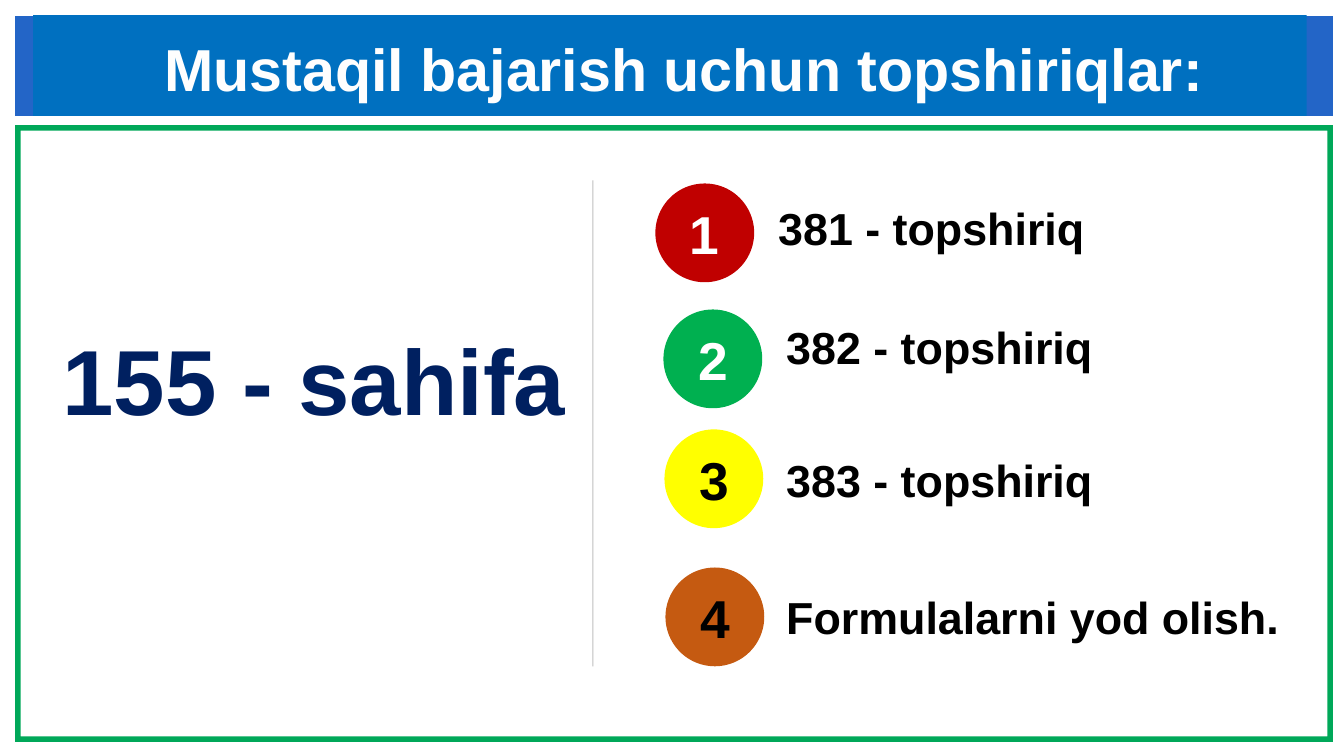
"""Builds a slide that lists four tasks for independent work."""
from lxml import etree
from pptx import Presentation
from pptx.dml.color import RGBColor
from pptx.enum.shapes import MSO_CONNECTOR, MSO_SHAPE
from pptx.enum.text import MSO_ANCHOR, PP_ALIGN
from pptx.oxml.ns import qn
from pptx.util import Inches, Pt

RECTANGLE, OVAL, FRAME = MSO_SHAPE.RECTANGLE, MSO_SHAPE.OVAL, MSO_SHAPE.FRAME
STRAIGHT = MSO_CONNECTOR.STRAIGHT
MIDDLE, TOP = MSO_ANCHOR.MIDDLE, MSO_ANCHOR.TOP
LEFT, CENTER = PP_ALIGN.LEFT, PP_ALIGN.CENTER
COLORS = {
    "frame": "00A859", "band": "2365C7", "title": "0070C0", "title text": "FEFEFE",
    "page number": "002060", "divider": "7F7F7F", "white": "FFFFFF", "black": "000000",
    "red": "C00000", "green": "00B050", "yellow": "FFFF00", "brown": "C55A11",
}
MARGIN, FULL_WIDTH = 0.15, 13.07
BADGE = 0.98
TASKS = [
    ("381 - topshiriq", "red", "white", 6.5, 1.82, 7.62, 1.94),
    ("382 - topshiriq", "green", "white", 6.58, 3.07, 7.7, 3.12),
    ("383 - topshiriq", "yellow", "black", 6.59, 4.26, 7.7, 4.44),
    ("Formulalarni yod olish.", "brown", "black", 6.6, 5.63, 7.7, 5.8),
]


def add_block(kind, left, top, width, height, color):
    block = page.shapes.add_shape(kind, *map(Inches, (left, top, width, height)))
    block.shadow.inherit = False
    block.fill.solid()
    block.fill.fore_color.rgb = RGBColor.from_string(COLORS[color])
    block.line.fill.background()
    return block


def write(box, text, size, color, align=LEFT, anchor=TOP, wrap=True):
    frame = box.text_frame
    frame.text = text
    frame.word_wrap = wrap
    frame.vertical_anchor = anchor
    para = frame.paragraphs[0]
    para.alignment = align
    font = para.runs[0].font
    font.name, font.size, font.bold = "Arial", Pt(size), True
    font.color.rgb = RGBColor.from_string(COLORS[color])
    return para


deck = Presentation()
deck.slide_width, deck.slide_height = Inches(13.33), Inches(7.5)
page = deck.slides.add_slide(deck.slide_layouts[6])

border = add_block(FRAME, MARGIN, 1.24, FULL_WIDTH, 6.12, "frame")
border.adjustments[0] = 0.009
add_block(RECTANGLE, MARGIN, 0.16, FULL_WIDTH, 0.99, "band")

title = add_block(RECTANGLE, 0.33, 0.15, 12.63, 1, "title")
title_para = write(title, "Mustaqil bajarish uchun topshiriqlar:", 42.3, "title text", anchor=MIDDLE)
title_para.space_before = Pt(2.8)
title.text_frame.margin_left, title.text_frame.margin_right = Inches(1.3), 0
title.text_frame.margin_top, title.text_frame.margin_bottom = Inches(0.04), 0

page_number = page.shapes.add_textbox(*map(Inches, (0.52, 3.16, 5.25, 1.21)))
write(page_number, "155 - sahifa", 66, "page number", wrap=False)

divider = page.shapes.add_connector(STRAIGHT, *map(Inches, (5.88, 1.79, 5.88, 6.61)))
divider.line.width = Pt(0.75)
divider.line.color.rgb = RGBColor.from_string(COLORS["divider"])
properties = divider._element.spPr
tint = properties.find(".//" + qn("a:srgbClr"))
etree.SubElement(tint, qn("a:alpha"), val="50000")
etree.SubElement(properties, qn("a:effectLst"))

for number, (task, fill, ink, badge_left, badge_top, left, top) in enumerate(TASKS, 1):
    badge = add_block(OVAL, badge_left, badge_top, BADGE, BADGE, fill)
    write(badge, str(number), 38.1, ink, CENTER, MIDDLE)
    label = page.shapes.add_textbox(*map(Inches, (left, top, 5.2, 0.64)))
    write(label, task, 32, "black").space_after = Pt(2)

deck.save("out.pptx")
